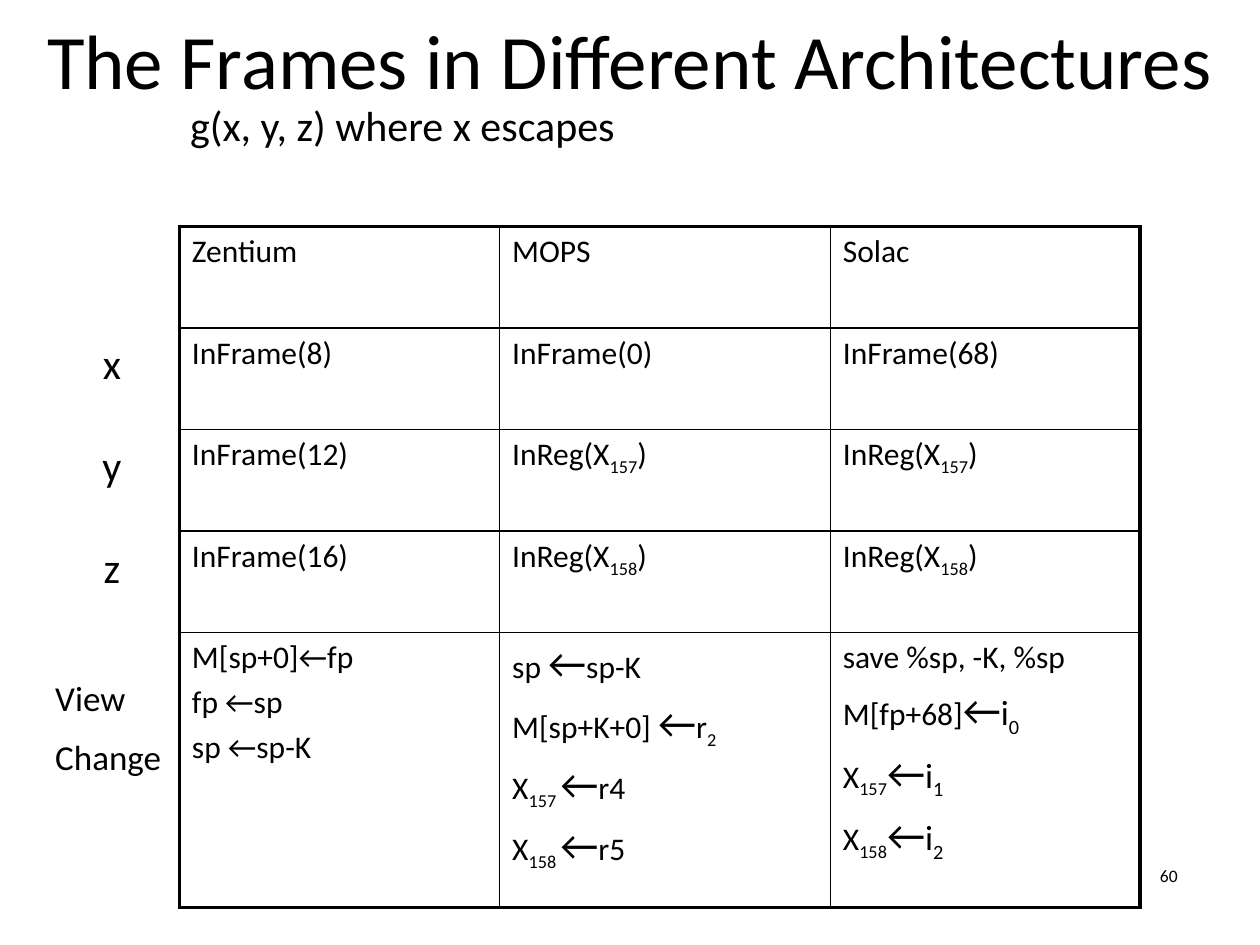
from lxml.etree import SubElement
from pptx import Presentation
from pptx.dml.color import RGBColor
from pptx.enum.text import MSO_ANCHOR, PP_ALIGN
from pptx.oxml.ns import qn
from pptx.util import Pt

BLACK = RGBColor(0, 0, 0)
FONT = "Calibri"
BODY_SIZE = 18
OUTER_LINE, INNER_LINE = 2.25, 1
SUBSCRIPT = "-25000"


# Content: a paragraph is a list of runs (text, size, is subscript)
def plain(text, size=BODY_SIZE):
    return (text, size, False)


def sub(text, size=BODY_SIZE):
    return (text, size, True)


def register(number):
    return [[plain("InReg(X"), sub(number), plain(")")]]


def lines(*texts, size=BODY_SIZE):
    return [[plain(text, size)] for text in texts]


ARROW = plain("←", 24)
TITLE = "The Frames in Different Architectures"
TABLE_ROWS = [
    [lines("Zentium"), lines("MOPS"), lines("Solac")],
    [lines("InFrame(8)"), lines("InFrame(0)"), lines("InFrame(68)")],
    [lines("InFrame(12)"), register("157"), register("157")],
    [lines("InFrame(16)"), register("158"), register("158")],
    [
        lines("M[sp+0]←fp", "fp ←sp", "sp ←sp-K"),
        [
            [plain("sp "), ARROW, plain("sp-K")],
            [plain("M[sp+K+0] "), ARROW, plain("r"), sub("2")],
            [plain("X"), sub("157 "), ARROW, plain("r4")],
            [plain("X"), sub("158 "), ARROW, plain("r5")],
        ],
        [
            [plain("save %sp, -K, %sp")],
            [plain("M[fp+68]"), ARROW, plain("i", 20), sub("0", 20)],
            [plain("X"), sub("157"), ARROW, plain("i", 20), sub("1", 20)],
            [plain("X"), sub("158"), ARROW, plain("i", 20), sub("2", 20)],
        ],
    ],
]
TABLE_LEFT, TABLE_TOP = 102.5, 129.5
COLUMN_WIDTHS = [183, 189, 177]
ROW_HEIGHTS = [58, 58, 58, 58, 157]

# Row labels beside the table, one per variable
VARIABLES = ["x", "y", "z"]
LABEL_TOP, LABEL_STEP = 189.5, 58.25

# Left, top, width, height, alignment, paragraphs
TEXT_BOXES = [
    (530, 490.5, 150, 36, PP_ALIGN.RIGHT, lines("60", size=10)),
    (16, 53.5, 428, 36, PP_ALIGN.CENTER, lines("g(x, y, z) where x escapes", size=24)),
    (24.5, 383, 83, 67, PP_ALIGN.LEFT, lines("View", "Change", size=20)),
] + [
    (51, LABEL_TOP + index * LABEL_STEP, 26, 36, PP_ALIGN.CENTER, lines(name, size=24))
    for index, name in enumerate(VARIABLES)
]


def write_text(frame, paragraphs, gap, alignment=PP_ALIGN.LEFT):
    """Fill a frame; gap is the space between paragraphs as a share of text size."""
    for index, runs in enumerate(paragraphs):
        paragraph = frame.add_paragraph() if index else frame.paragraphs[0]
        paragraph.alignment = alignment
        if index:
            paragraph.space_before = Pt(gap * max(size for _, size, _ in runs))
        for text, size, is_subscript in runs:
            run = paragraph.add_run()
            run.text = text
            for name, value in {"name": FONT, "size": Pt(size), "bold": False}.items():
                setattr(run.font, name, value)
            run.font.color.rgb = BLACK
            if is_subscript:
                run.font._element.set("baseline", SUBSCRIPT)


def set_borders(cell, widths):
    """Draw the cell borders; lines must precede the fill in the cell properties."""
    properties = cell._tc.get_or_add_tcPr()
    for index, (side, width) in enumerate(widths.items()):
        line = SubElement(properties, qn(f"a:ln{side}"), w=str(int(Pt(width))))
        fill = SubElement(line, qn("a:solidFill"))
        SubElement(fill, qn("a:srgbClr"), val=str(BLACK))
        properties.insert(index, line)


def add_title(slide):
    title = slide.shapes.title
    place = {"left": Pt(0), "top": Pt(-11.5), "width": Pt(720), "height": Pt(90)}
    for name, value in place.items():
        setattr(title, name, value)
    title.text_frame.vertical_anchor = MSO_ANCHOR.MIDDLE
    title.text_frame.word_wrap = True
    write_text(title.text_frame, lines(TITLE, size=44), 0, PP_ALIGN.CENTER)


def add_frame_table(slide):
    last_row, last_column = len(ROW_HEIGHTS) - 1, len(COLUMN_WIDTHS) - 1
    table = slide.shapes.add_table(
        len(ROW_HEIGHTS), len(COLUMN_WIDTHS), Pt(TABLE_LEFT), Pt(TABLE_TOP),
        Pt(sum(COLUMN_WIDTHS)), Pt(sum(ROW_HEIGHTS)),
    ).table
    table.first_row = table.horz_banding = False
    for column, width in zip(table.columns, COLUMN_WIDTHS):
        column.width = Pt(width)
    for row, height in zip(table.rows, ROW_HEIGHTS):
        row.height = Pt(height)
    for row_index, row in enumerate(TABLE_ROWS):
        for column_index, paragraphs in enumerate(row):
            cell = table.cell(row_index, column_index)
            write_text(cell.text_frame, paragraphs, 0.2)
            cell.fill.background()
            on_edge = {
                "L": column_index == 0,
                "R": column_index == last_column,
                "T": row_index == 0,
                "B": row_index == last_row,
            }
            set_borders(cell, {side: OUTER_LINE if outer else INNER_LINE
                               for side, outer in on_edge.items()})


def main():
    presentation = Presentation()
    presentation.slide_width, presentation.slide_height = Pt(720), Pt(540)
    slide = presentation.slides.add_slide(presentation.slide_layouts[5])

    add_title(slide)
    add_frame_table(slide)

    # Subtitle, row labels and slide number
    for left, top, width, height, alignment, paragraphs in TEXT_BOXES:
        box = slide.shapes.add_textbox(Pt(left), Pt(top), Pt(width), Pt(height))
        box.text_frame.word_wrap = True
        write_text(box.text_frame, paragraphs, 0.5, alignment)

    presentation.save("out.pptx")


if __name__ == "__main__":
    main()
